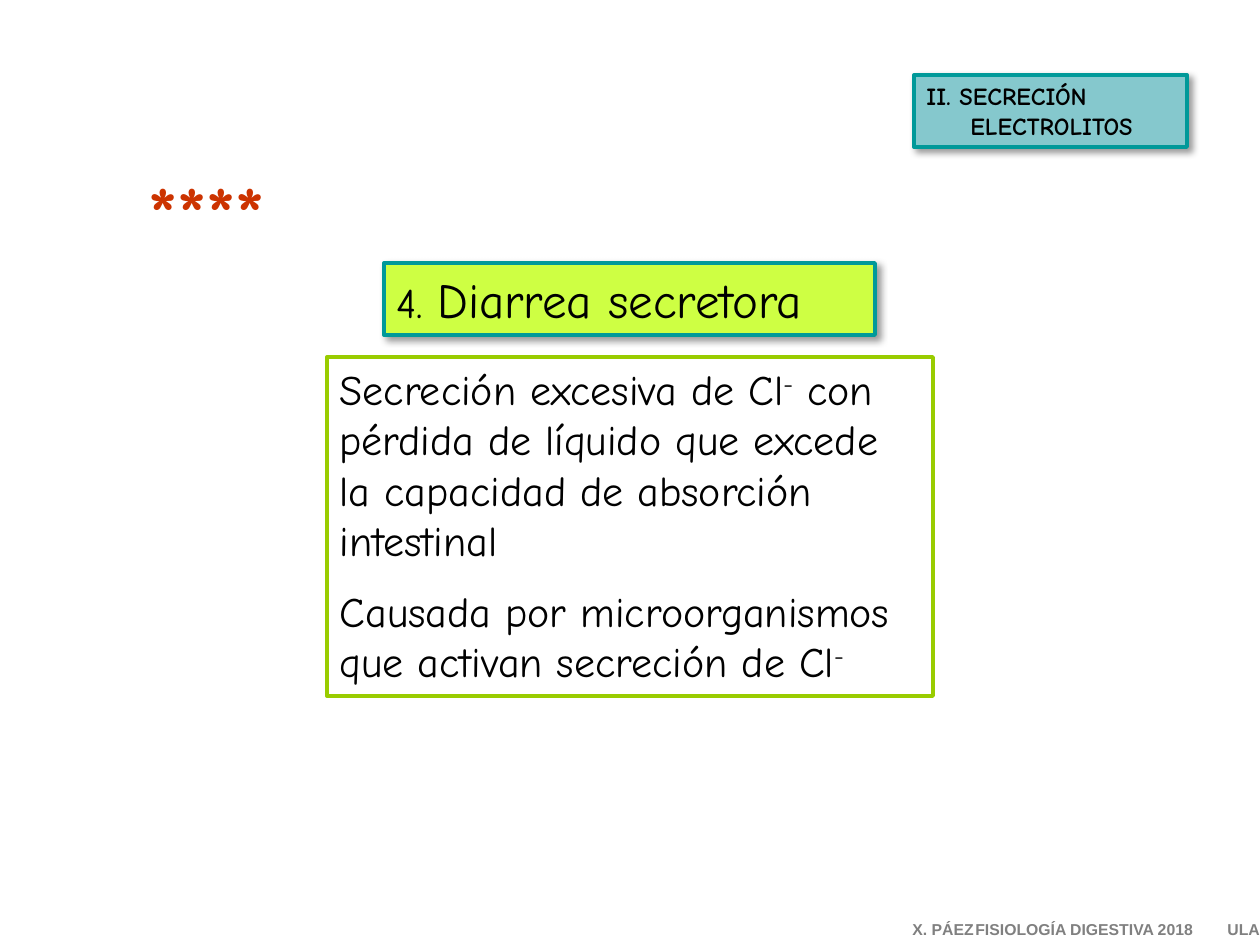
from lxml import etree
from pptx import Presentation
from pptx.dml.color import RGBColor
from pptx.enum.shapes import MSO_SHAPE
from pptx.enum.text import MSO_ANCHOR, MSO_AUTO_SIZE, PP_ALIGN
from pptx.oxml.ns import qn
from pptx.util import Emu, Pt

RECT = MSO_SHAPE.RECTANGLE
TOP, LEFT, FIXED = MSO_ANCHOR.TOP, PP_ALIGN.LEFT, MSO_AUTO_SIZE.NONE
SCALE = 914400 / 126
COMIC, SANS = "Comic Neue", "Arial"
TEAL, LIME, BLACK = "009999", "99CC00", "000000"

# Each paragraph is a list of (text, size) runs; "-" alone is a superscript.
TITLE = [[("4. ", 24), ("Diarrea secretora", 28)]]
BODY = [
    [("Secreción excesiva de Cl", 24), ("-", 24),
     (" con pérdida de líquido que excede la capacidad de absorción intestinal", 24)],
    [("Causada por microorganismos que activan secreción de Cl", 24), ("-", 24)],
]
STARS = [[("****", 44)]]
TAG = [[("II. SECRECIÓN", 14)], [("ELECTROLITOS", 14)]]
FOOT = [[("X. PÁEZ\tFISIOLOGÍA DIGESTIVA 2018\tULA", 9)]]
FOOT_TABS = (74, 300)
TAG_INDENT = 44


def px(n):
    return Emu(round(n * SCALE))


def rgb(code):
    return RGBColor.from_string(code)


def node(parent, tag, **attrs):
    values = {key: str(val) for key, val in attrs.items()}
    return etree.SubElement(parent, qn("a:" + tag), values)


def shade(parent, blur, dist, alpha):
    """Add a black outer shadow at 45 degrees; blur and dist in points."""
    effects = node(parent, "effectLst")
    outer = node(effects, "outerShdw", blurRad=Pt(blur), dist=Pt(dist),
                 dir=2700000, algn="tl", rotWithShape=0)
    node(node(outer, "srgbClr", val=BLACK), "alpha", val=alpha * 1000)
    return effects


def place(shape, box):
    shape.left, shape.top, shape.width, shape.height = map(px, box)


def frame(shape, line, fill=None):
    shape.line.color.rgb = rgb(line)
    shape.line.width = Pt(2.25)
    if fill:
        shape.fill.solid()
        shape.fill.fore_color.rgb = rgb(fill)
        shade(shape._element.spPr, 4, 3, 40)
    else:
        shape.fill.background()


def write(shape, paras, font=COMIC, color=BLACK, bold=False):
    text = shape.text_frame
    text.word_wrap = True
    text.auto_size = FIXED
    text.vertical_anchor = TOP
    for i, runs in enumerate(paras):
        para = text.add_paragraph() if i else text.paragraphs[0]
        para.alignment = LEFT
        para.space_before = Pt(0)
        props = para._p.get_or_add_pPr()
        props.set("marL", "0")
        props.set("indent", "0")
        node(props, "buNone")
        for words, size in runs:
            run = para.add_run()
            run.text = words
            run.font.size = Pt(size)
            run.font.name = font
            run.font.bold = bold
            run.font.color.rgb = rgb(color)
            if words == "-":
                run.font._element.set("baseline", "30000")
    return text.paragraphs


def main():
    deck = Presentation()
    deck.slide_width, deck.slide_height = px(1260), px(945)
    slide = deck.slides.add_slide(deck.slide_layouts[1])
    shapes = slide.shapes

    title = shapes.title
    place(title, (384, 263, 491, 72))
    frame(title, TEAL, "CEFF43")
    write(title, TITLE)

    body = slide.placeholders[1]
    place(body, (327, 357, 606, 339))
    frame(body, LIME)
    write(body, BODY)[1].space_before = Pt(11.5)

    stars = shapes.add_textbox(*map(px, (136, 158, 190, 106)))
    run = write(stars, STARS, color="CC3300", bold=True)[0].runs[0]
    props = run.font._element
    props.find(qn("a:solidFill")).addnext(shade(props, 0, 2, 100))

    tag = shapes.add_shape(RECT, *map(px, (914, 75, 273, 72)))
    frame(tag, TEAL, "85C8CD")
    lines = write(tag, TAG, bold=True)
    lines[1]._p.pPr.set("marL", str(px(TAG_INDENT)))

    foot = shapes.add_textbox(*map(px, (900, 914, 360, 31)))
    foot.text_frame.margin_right = 0
    line = write(foot, FOOT, SANS, "808080", True)[0]
    tabs = node(line._p.pPr, "tabLst")
    for stop in FOOT_TABS:
        node(tabs, "tab", pos=px(stop), algn="l")

    deck.save("out.pptx")


if __name__ == "__main__":
    main()
